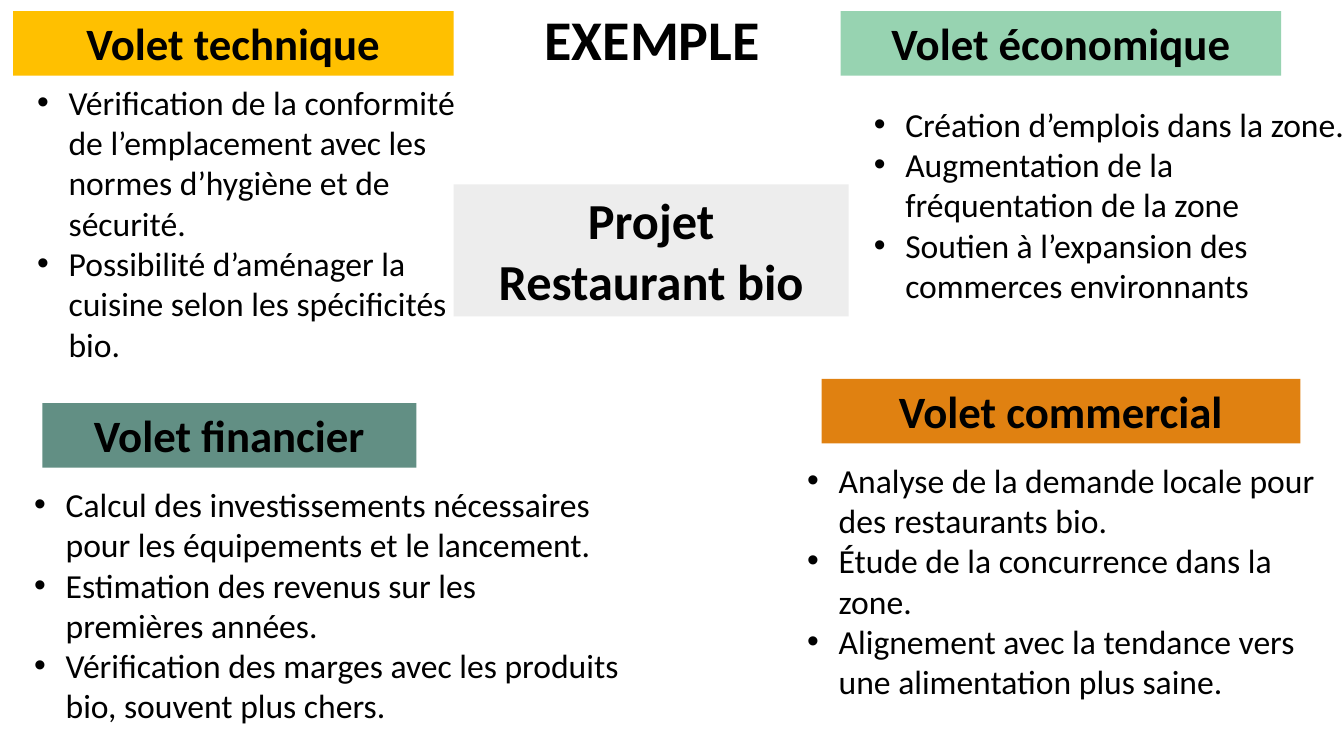
from dataclasses import dataclass

from lxml import etree
from pptx import Presentation
from pptx.dml.color import RGBColor
from pptx.enum.shapes import MSO_SHAPE
from pptx.enum.text import MSO_ANCHOR, MSO_AUTO_SIZE, PP_ALIGN
from pptx.oxml.ns import qn
from pptx.util import Pt

RECTANGLE = MSO_SHAPE.RECTANGLE
TOP = MSO_ANCHOR.TOP
FIT_SHAPE = MSO_AUTO_SIZE.SHAPE_TO_FIT_TEXT
LEFT, CENTER = PP_ALIGN.LEFT, PP_ALIGN.CENTER


@dataclass(frozen=True)
class Theme:
    font: str = "Calibri"
    ink: str = "000000"
    technical: str = "FFC000"
    economic: str = "97D3B1"
    financial: str = "628F84"
    commercial: str = "E08111"
    project: str = "EDEDED"
    title_size: float = 40
    project_size: float = 36
    heading_size: float = 32
    body_size: float = 24
    bullet_indent: float = 22.5


def add_bullet(paragraph, indent):
    properties = paragraph._p.get_or_add_pPr()
    properties.set("marL", str(Pt(indent)))
    properties.set("indent", str(-Pt(indent)))
    etree.SubElement(properties, qn("a:buFont")).set("typeface", "Arial")
    etree.SubElement(properties, qn("a:buChar")).set("char", "•")


def fill_text(frame, lines, *, font, size, color, bold=False, align=LEFT, indent=None):
    """Fill a text frame, one paragraph a line; an indent makes them bullets."""
    frame.word_wrap = True
    frame.auto_size = FIT_SHAPE
    frame.vertical_anchor = TOP
    for index, line in enumerate(lines):
        paragraph = frame.paragraphs[0] if index == 0 else frame.add_paragraph()
        paragraph.alignment = align
        if indent is not None:
            add_bullet(paragraph, indent)
        run = paragraph.add_run()
        run.text = line
        run.font.name = font
        run.font.size = Pt(size)
        run.font.bold = bold
        run.font.color.rgb = RGBColor.from_string(color)


class SlideBuilder:
    def __init__(self, slide, theme):
        self.slide = slide
        self.theme = theme

    def label(self, shape, lines, size, **style):
        fill_text(shape.text_frame, lines, font=self.theme.font,
                  size=size, color=self.theme.ink, **style)

    def banner(self, box, lines, fill, size):
        shape = self.slide.shapes.add_shape(RECTANGLE, *map(Pt, box))
        shape.shadow.inherit = False
        shape.fill.solid()
        shape.fill.fore_color.rgb = RGBColor.from_string(fill)
        shape.line.fill.background()
        self.label(shape, lines, size, bold=True, align=CENTER)

    def bullets(self, box, lines):
        shape = self.slide.shapes.add_textbox(*map(Pt, box))
        self.label(shape, lines, self.theme.body_size, indent=self.theme.bullet_indent)

    def title(self, box, text):
        shape = self.slide.shapes.add_textbox(*map(Pt, box))
        self.label(shape, [text], self.theme.title_size, bold=True, align=CENTER)


THEME = Theme()
BANNER_HEIGHT = 46.08

# Each section: heading, fill, banner (left, top, width), bullet box, bullets
SECTIONS = [
    ("Volet commercial", THEME.commercial, (586.8, 270.72, 342),
     (569.52, 324.72, 401, 181.44),
     ["Analyse de la demande locale pour des restaurants bio.",
      "Étude de la concurrence dans la zone.",
      "Alignement avec la tendance vers une alimentation plus saine."]),
    ("Volet financier", THEME.financial, (30.24, 288, 267.12),
     (17.28, 342, 433, 181.44),
     ["Calcul des investissements nécessaires pour les équipements et le lancement.",
      "Estimation des revenus sur les premières années.",
      "Vérification des marges avec les produits bio, souvent plus chers."]),
    ("Volet technique", THEME.technical, (9.36, 7.92, 314.64),
     (19.44, 54.72, 314.64, 210.96),
     ["Vérification de la conformité de l’emplacement avec les normes "
      "d’hygiène et de sécurité.",
      "Possibilité d’aménager la cuisine selon les spécificités bio."]),
    ("Volet économique", THEME.economic, (600.48, 7.92, 314.64),
     (617.04, 70.56, 353.52, 152.64),
     ["Création d’emplois dans la zone.",
      "Augmentation de la fréquentation de la zone",
      "Soutien à l’expansion des commerces environnants"]),
]


def main():
    presentation = Presentation()
    presentation.slide_width, presentation.slide_height = Pt(960), Pt(540)
    blank = presentation.slide_layouts[6]
    builder = SlideBuilder(presentation.slides.add_slide(blank), THEME)

    # The four sections of the study
    for heading, fill, banner, body, points in SECTIONS:
        builder.banner((*banner, BANNER_HEIGHT), [heading], fill, THEME.heading_size)
        builder.bullets(body, points)

    # Title and central project
    builder.title((249.12, 0, 433.44, 55.44), "EXEMPLE")
    builder.banner((324, 131.76, 282.24, 94.32), ["Projet", "Restaurant bio"],
                   THEME.project, THEME.project_size)

    presentation.save("out.pptx")


if __name__ == "__main__":
    main()
